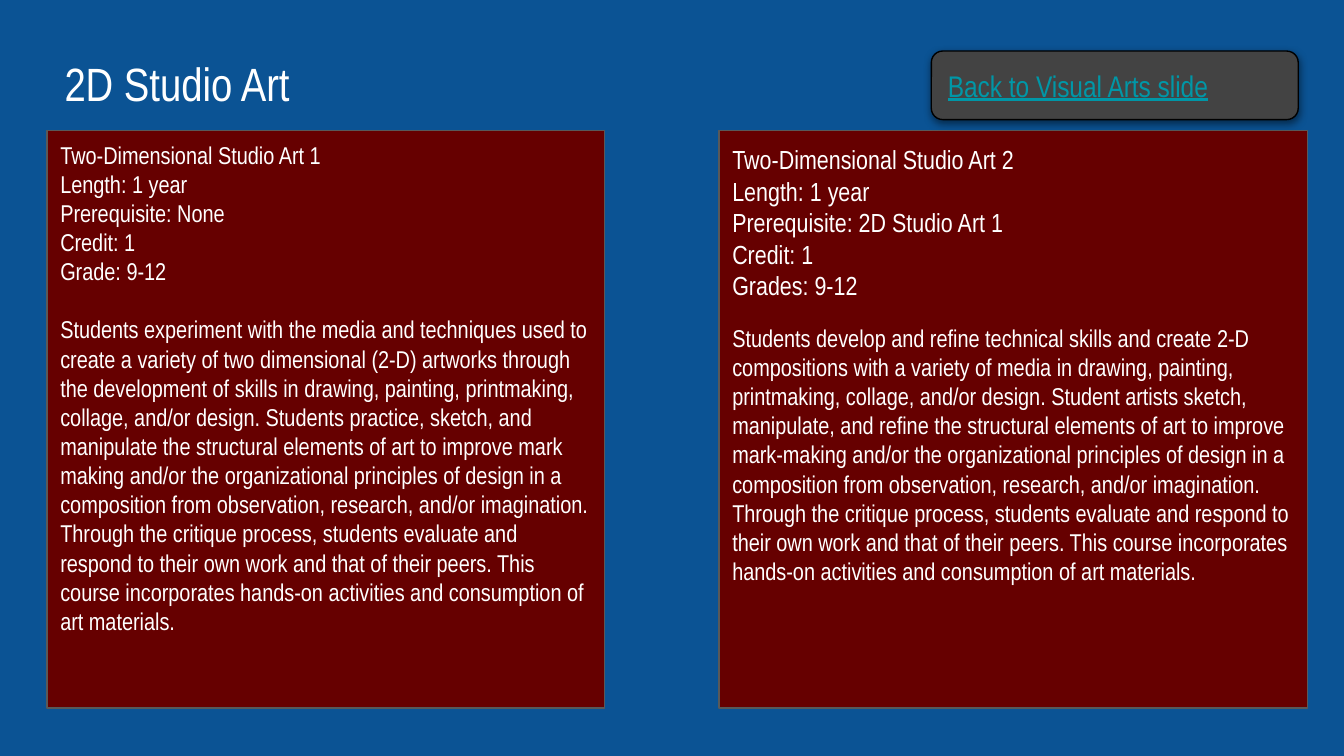
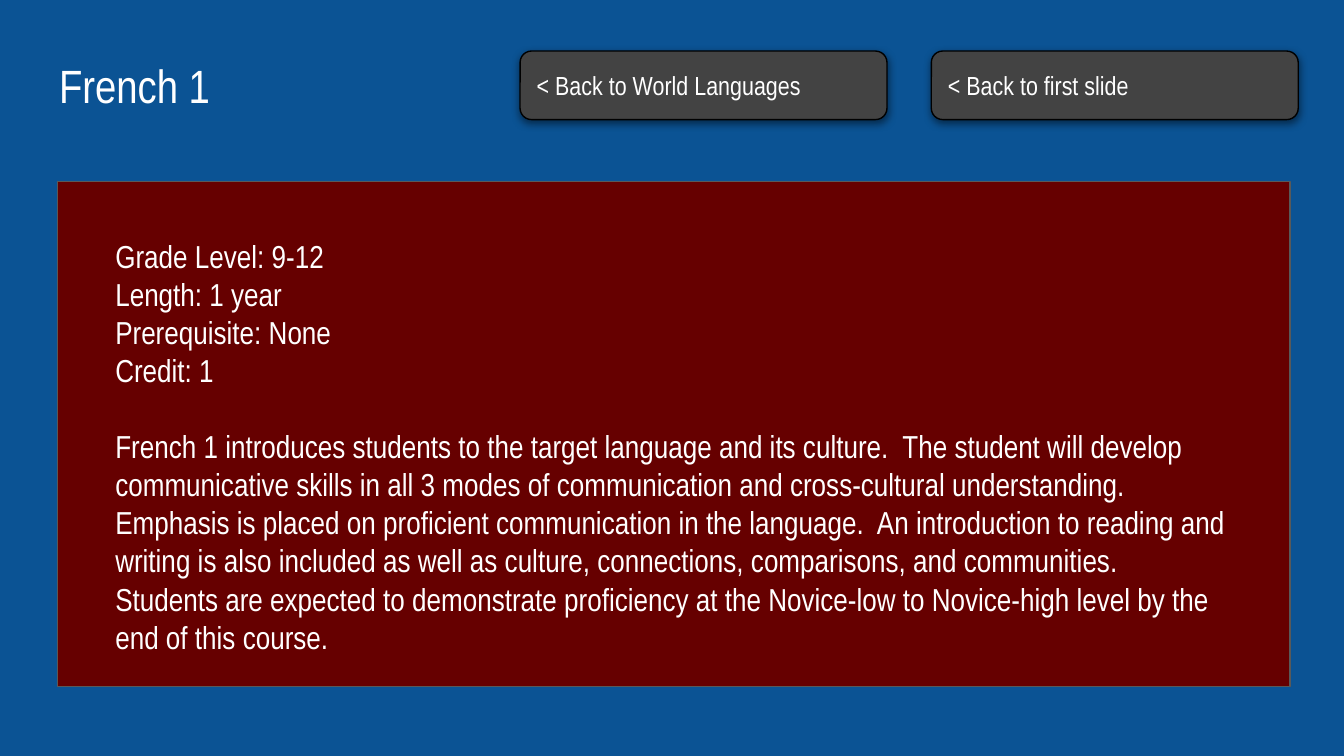
import lxml.etree
import pptx
import pptx.dml.color
import pptx.enum.shapes
import pptx.enum.text
import pptx.oxml
import pptx.oxml.ns
import pptx.util

EMU_PER_PX = 9144  # 100 px to the inch
FONT = "Arial Narrow"
LINE_HEIGHT = 1.2
BUTTON_TOP, BUTTON_WIDTH, BUTTON_HEIGHT = 38, 273, 51
COLORS = {
    "background": "0B5394",
    "panel": "660000",
    "panel line": "595959",
    "button": "434343",
    "button line": "000000",
    "text": "FFFFFF",
    "link": "0097A7",
}
SHADOW = (
    f'<a:effectLst {pptx.oxml.ns.nsdecls("a")}>'
    '<a:outerShdw blurRad="57150" dist="19050" dir="5400000" algn="bl" rotWithShape="0">'
    '<a:srgbClr val="000000"><a:alpha val="50000"/></a:srgbClr>'
    "</a:outerShdw></a:effectLst>"
)

# Boxes are left, top, width, height in px.
# Each course gives its heading size, description size and the size of the gap between them.
SLIDES = [
    {
        "title": "2D Studio Art",
        "title box": (38, 31, 554, 62),
        "buttons": [(693, "Back to Visual Arts slide", 16, "link")],
        "courses": [
            {
                "panel": (35, 97, 415, 430),
                "text box": (35, 94, 415, 436),
                "sizes": (13, 13, 13),
                "facts": ["Two-Dimensional Studio Art 1", "Length: 1 year",
                          "Prerequisite: None", "Credit: 1", "Grade: 9-12"],
                "description": (
                    "Students experiment with the media and techniques used to create a variety of "
                    "two dimensional (2-D) artworks through the development of skills in drawing, "
                    "painting, printmaking, collage, and/or design. Students practice, sketch, and "
                    "manipulate the structural elements of art to improve mark making and/or the "
                    "organizational principles of design in a composition from observation, "
                    "research, and/or imagination. Through the critique process, students evaluate "
                    "and respond to their own work and that of their peers. This course "
                    "incorporates hands-on activities and consumption of art materials."
                ),
            },
            {
                "panel": (535, 97, 438, 430),
                "text box": (535, 97, 438, 396),
                "sizes": (14, 13, 10),
                "facts": ["Two-Dimensional Studio Art 2", "Length: 1 year",
                          "Prerequisite: 2D Studio Art 1", "Credit: 1", "Grades: 9-12"],
                "description": (
                    "Students develop and refine technical skills and create 2-D compositions with "
                    "a variety of media in drawing, painting, printmaking, collage, and/or design. "
                    "Student artists sketch, manipulate, and refine the structural elements of art "
                    "to improve mark-making and/or the organizational principles of design in a "
                    "composition from observation, research, and/or imagination. Through the "
                    "critique process, students evaluate and respond to their own work and that of "
                    "their peers. This course incorporates hands-on activities and consumption of "
                    "art materials."
                ),
            },
        ],
    },
    {
        "title": "French 1",
        "title box": (34, 32, 932, 63),
        "buttons": [(693, "< Back to first slide", 14, "text"),
                    (387, "< Back to World Languages", 14, "text")],
        "courses": [
            {
                "panel": (43, 135, 917, 376),
                "text box": (76, 166, 853, 324),
                "sizes": (17, 17, 17),
                "facts": ["Grade Level: 9-12", "Length: 1 year", "Prerequisite: None", "Credit: 1"],
                "description": (
                    "French 1 introduces students to the target language and its culture.  The "
                    "student will develop communicative skills in all 3 modes of communication and "
                    "cross-cultural understanding.  Emphasis is placed on proficient communication "
                    "in the language.  An introduction to reading and writing is also included as "
                    "well as culture, connections, comparisons, and communities.  Students are "
                    "expected to demonstrate proficiency at the Novice-low to Novice-high level by "
                    "the end of this course."
                ),
            },
        ],
    },
]


def add_block(page, kind, box, color):
    """Add a filled shape with a thin outline in the matching line colour."""
    block = page.shapes.add_shape(kind, *[length * EMU_PER_PX for length in box])
    block.shadow.inherit = False
    block.fill.solid()
    block.fill.fore_color.rgb = pptx.dml.color.RGBColor.from_string(COLORS[color])
    block.line.color.rgb = pptx.dml.color.RGBColor.from_string(COLORS[color + " line"])
    block.line.width = pptx.util.Pt(0.75)
    return block


def write(shape, lines, anchor, color="text"):
    """Fill a shape with left-aligned paragraphs given as (text, size, space before)."""
    frame = shape.text_frame
    frame.word_wrap = True
    frame.auto_size = pptx.enum.text.MSO_AUTO_SIZE.NONE
    frame.vertical_anchor = anchor
    frame.margin_left = frame.margin_right = 10 * EMU_PER_PX
    frame.margin_top = frame.margin_bottom = 10 * EMU_PER_PX
    for index, (text, size, space) in enumerate(lines):
        para = frame.add_paragraph() if index else frame.paragraphs[0]
        para.text = text
        para.alignment = pptx.enum.text.PP_ALIGN.LEFT
        para.space_before = pptx.util.Pt(space)
        para.font.name = FONT
        para.font.size = pptx.util.Pt(size)
        para.font.color.rgb = pptx.dml.color.RGBColor.from_string(COLORS[color])
        if color == "link":
            para.font.underline = True


TOP = pptx.enum.text.MSO_ANCHOR.TOP
MIDDLE = pptx.enum.text.MSO_ANCHOR.MIDDLE
RECTANGLE = pptx.enum.shapes.MSO_SHAPE.RECTANGLE
ROUNDED = pptx.enum.shapes.MSO_SHAPE.ROUNDED_RECTANGLE

deck = pptx.Presentation()
deck.slide_width = 1000 * EMU_PER_PX
deck.slide_height = deck.slide_width * 9 // 16
background = deck.slide_master.background.fill
background.solid()
background.fore_color.rgb = pptx.dml.color.RGBColor.from_string(COLORS["background"])
title_only = deck.slide_layouts.get_by_name("Title Only")

for content in SLIDES:
    page = deck.slides.add_slide(title_only)
    title = page.shapes.title
    title.left, title.top, title.width, title.height = [
        length * EMU_PER_PX for length in content["title box"]
    ]
    write(title, [(content["title"], 25, 0)], TOP)

    for course in content["courses"]:
        add_block(page, RECTANGLE, course["panel"], "panel")
        fact_size, description_size, gap_size = course["sizes"]
        lines = [(fact, fact_size, 0) for fact in course["facts"]]
        lines.append((course["description"], description_size, round(gap_size * LINE_HEIGHT, 1)))
        box = page.shapes.add_textbox(*[length * EMU_PER_PX for length in course["text box"]])
        write(box, lines, TOP)

    for left, label, size, color in content["buttons"]:
        button = add_block(page, ROUNDED, (left, BUTTON_TOP, BUTTON_WIDTH, BUTTON_HEIGHT), "button")
        properties = button._element.spPr
        effects = properties.find(pptx.oxml.ns.qn("a:effectLst"))
        properties.replace(effects, lxml.etree.fromstring(SHADOW))
        write(button, [(label, size, 0)], MIDDLE, color)

deck.save("out.pptx")
